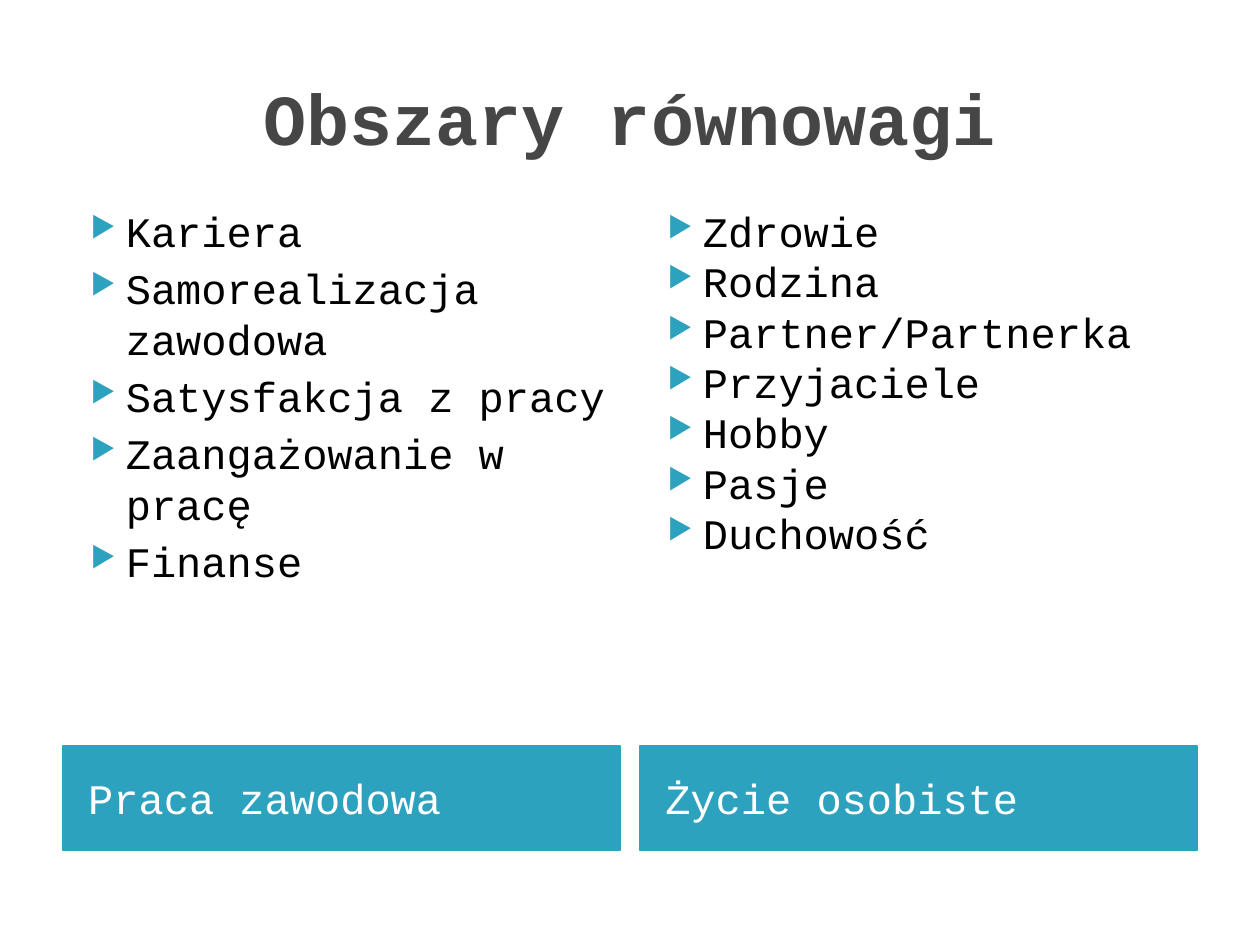
from lxml import etree
from pptx import Presentation
from pptx.dml.color import RGBColor
from pptx.enum import shapes, text
from pptx.oxml import ns
from pptx.util import Inches, Pt

# Content
TITLE = "Obszary równowagi"
COLUMNS = [
    {"label": "Praca zawodowa", "gap": 4,
     "items": ["Kariera", "Samorealizacja zawodowa", "Satysfakcja z pracy",
               "Zaangażowanie w pracę", "Finanse"]},
    {"label": "Życie osobiste", "gap": 0,
     "items": ["Zdrowie", "Rodzina", "Partner/Partnerka", "Przyjaciele",
               "Hobby", "Pasje", "Duchowość"]},
]

# Format
FONT, TEAL = "Courier New", "2DA2BF"
TITLE_FONT = {"name": FONT, "size": Pt(41), "bold": True}
BODY_FONT = {"name": FONT, "size": Pt(24), "bold": False}
MARGIN, COLUMN_WIDTH, COLUMN_STEP = 0.5, 4.42, 4.58
LIST_TOP, LIST_HEIGHT = 1.58, 4.31
LABEL_TOP, LABEL_HEIGHT = 5.92, 0.83


def color(value):
    return RGBColor.from_string(value)


def style(para, values, ink):
    for name, value in values.items():
        setattr(para.font, name, value)
    para.font.color.rgb = color(ink)


def add_bullet(para):
    props = para._p.get_or_add_pPr()
    props.set("marL", str(Inches(0.4)))
    props.set("indent", str(Inches(-0.28)))
    tint = etree.SubElement(props, ns.qn("a:buClr"))
    etree.SubElement(tint, ns.qn("a:srgbClr"), val=TEAL)
    etree.SubElement(props, ns.qn("a:buSzPct"), val="68000")
    etree.SubElement(props, ns.qn("a:buChar"), char="▶")


def add_list(page, left, items, gap):
    box = page.shapes.add_textbox(Inches(left), Inches(LIST_TOP),
                                  Inches(COLUMN_WIDTH), Inches(LIST_HEIGHT))
    frame = box.text_frame
    frame.word_wrap = True
    frame.text = "\n".join(items)
    for index, para in enumerate(frame.paragraphs):
        para.space_before = Pt(gap if index else 0)
        add_bullet(para)
        style(para, BODY_FONT, "000000")


def add_label(page, left, label):
    bar = page.shapes.add_shape(
        shapes.MSO_SHAPE.RECTANGLE, Inches(left), Inches(LABEL_TOP),
        Inches(COLUMN_WIDTH), Inches(LABEL_HEIGHT))
    bar.shadow.inherit = False
    bar.fill.solid()
    bar.fill.fore_color.rgb = color(TEAL)
    bar.line.color.rgb = color(TEAL)
    bar.line.width = Pt(0.75)
    frame = bar.text_frame
    frame.text = label
    frame.margin_left = Inches(0.2)
    frame.vertical_anchor = text.MSO_ANCHOR.MIDDLE
    para = frame.paragraphs[0]
    para.alignment = text.PP_ALIGN.LEFT
    style(para, BODY_FONT, "FFFFFF")


def main():
    deck = Presentation()
    deck.slide_width, deck.slide_height = Inches(10), Inches(7.5)
    page = deck.slides.add_slide(deck.slide_layouts[5])

    # Title
    title = page.shapes.title
    title.left, title.top = Inches(MARGIN), Inches(0.3)
    title.width, title.height = Inches(9), Inches(1.25)
    title.text_frame.text = TITLE
    title.text_frame.vertical_anchor = text.MSO_ANCHOR.MIDDLE
    heading = title.text_frame.paragraphs[0]
    heading.alignment = text.PP_ALIGN.CENTER
    style(heading, TITLE_FONT, "464646")

    # Two columns: a list above its label
    for index, column in enumerate(COLUMNS):
        left = MARGIN + index * COLUMN_STEP
        add_list(page, left, column["items"], column["gap"])
        add_label(page, left, column["label"])

    deck.save("out.pptx")


if __name__ == "__main__":
    main()
